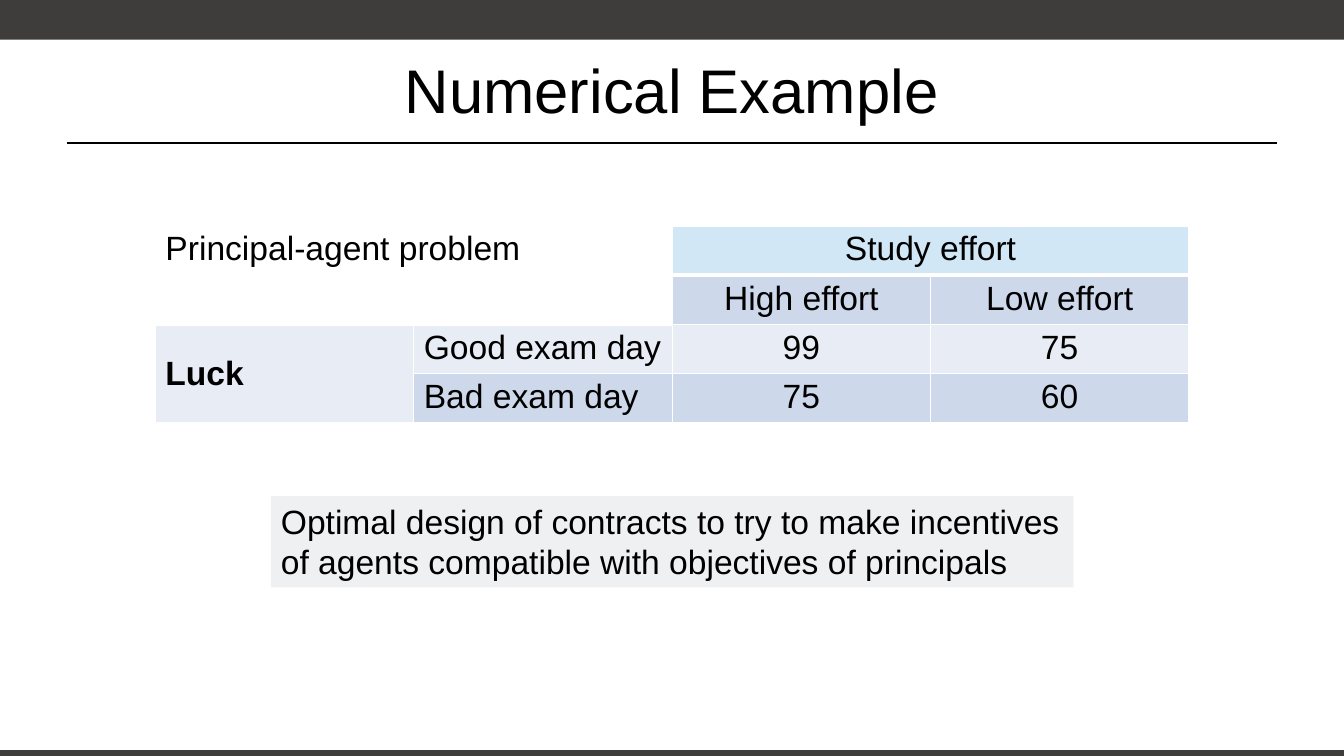
from lxml import etree
from pptx import Presentation
from pptx import util as u
from pptx.dml.color import RGBColor
from pptx.enum import shapes, text
from pptx.oxml import ns

BLACK = RGBColor(0x00, 0x00, 0x00)
WHITE = RGBColor(0xFF, 0xFF, 0xFF)
CHARCOAL = RGBColor(0x3E, 0x3D, 0x3C)
MIST = RGBColor(0xEF, 0xF0, 0xF1)
SKY = RGBColor(0xD1, 0xE7, 0xF6)
LIGHT_BAND = RGBColor(0xE8, 0xED, 0xF5)
DARK_BAND = RGBColor(0xCD, 0xD9, 0xEA)

LEFT, CENTER = text.PP_ALIGN.LEFT, text.PP_ALIGN.CENTER
WIDTH, HEIGHT = 33.87, 19.05

PAYOFFS = [
    ["Principal-agent problem", "", "Study effort", ""],
    ["", "", "High effort", "Low effort"],
    ["Luck", "Good exam day", "99", "75"],
    ["", "Bad exam day", "75", "60"],
]
FILLS = [
    [None, None, SKY, SKY],
    [None, None, DARK_BAND, DARK_BAND],
    [LIGHT_BAND] * 4,
    [LIGHT_BAND] + [DARK_BAND] * 3,
]
MERGES = [((0, 0), (1, 1)), ((0, 2), (0, 3)), ((2, 0), (3, 0))]


class SlideBuilder:
    font = "Arial"
    body_size = 24
    title_size = 44

    def __init__(self, page):
        self.page = page

    def label(self, frame, words, size, align=LEFT, bold=False):
        frame.text = words
        para = frame.paragraphs[0]
        para.alignment = align
        para.font.size = u.Pt(size)
        for span in para.runs:
            span.font.name = self.font
            span.font.size = u.Pt(size)
            span.font.bold = bold
            span.font.color.rgb = BLACK

    def box(self, left, top, width, height, fill):
        box = self.page.shapes.add_shape(
            shapes.MSO_SHAPE.RECTANGLE,
            u.Cm(left), u.Cm(top), u.Cm(width), u.Cm(height))
        box.shadow.inherit = False
        box.fill.solid()
        box.fill.fore_color.rgb = fill
        box.line.fill.background()
        return box

    def note(self, left, top, width, height, words, fill):
        frame = self.box(left, top, width, height, fill).text_frame
        frame.word_wrap = True
        frame.vertical_anchor = text.MSO_ANCHOR.TOP
        self.label(frame, words, self.body_size)

    def title(self, left, top, width, height, words):
        box = self.page.shapes.add_textbox(
            u.Cm(left), u.Cm(top), u.Cm(width), u.Cm(height))
        box.text_frame.word_wrap = True
        box.text_frame.vertical_anchor = text.MSO_ANCHOR.MIDDLE
        self.label(box.text_frame, words, self.title_size, CENTER)

    def rule(self, left, top, right):
        line = self.page.shapes.add_connector(
            shapes.MSO_CONNECTOR.STRAIGHT,
            u.Cm(left), u.Cm(top), u.Cm(right), u.Cm(top))
        line.line.color.rgb = BLACK
        line.line.width = u.Pt(1.25)
        etree.SubElement(line._element.spPr, ns.qn("a:effectLst"))

    def borders(self, cell, bottom):
        properties = cell._tc.get_or_add_tcPr()
        for side, points in (("L", 1), ("R", 1), ("T", 1), ("B", bottom)):
            edge = etree.SubElement(
                properties, ns.qn(f"a:ln{side}"), w=str(u.Pt(points)))
            paint = etree.SubElement(edge, ns.qn("a:solidFill"))
            etree.SubElement(paint, ns.qn("a:srgbClr"), val=str(WHITE))

    def table(self, left, top, column, row, values, fills, merges):
        rows, columns = len(values), len(values[0])
        table = self.page.shapes.add_table(
            rows, columns, u.Cm(left), u.Cm(top),
            u.Cm(column * columns), u.Cm(row * rows)).table
        table.first_row = table.horz_banding = False
        for start, end in merges:
            table.cell(*start).merge(table.cell(*end))
        for i in range(rows):
            for j in range(columns):
                cell = table.cell(i, j)
                cell.margin_left = cell.margin_right = u.Cm(0.25)
                cell.margin_top = cell.margin_bottom = u.Cm(0.11)
                words = values[i][j]
                self.borders(cell, 3 if i == 0 else 1)
                if fills[i][j] is None:
                    cell.fill.background()
                else:
                    cell.fill.solid()
                    cell.fill.fore_color.rgb = fills[i][j]
                if words == "Luck":
                    cell.vertical_anchor = text.MSO_ANCHOR.MIDDLE
                self.label(cell.text_frame, words, self.body_size,
                           CENTER if j > 1 else LEFT, words == "Luck")


def main():
    deck = Presentation()
    deck.slide_width, deck.slide_height = u.Cm(WIDTH), u.Cm(HEIGHT)
    slide = SlideBuilder(deck.slides.add_slide(deck.slide_layouts[6]))
    slide.box(0, 0, WIDTH, 1, CHARCOAL)
    slide.box(0, 18.9, WIDTH, 0.15, CHARCOAL)
    slide.rule(1.7, 3.6, 32.17)
    slide.title(1.7, 0.64, 30.47, 3.18, "Numerical Example")
    slide.note(6.83, 12.5, 20.22, 2.3,
               "Optimal design of contracts to try to make incentives "
               "of agents compatible with objectives of principals", MIST)
    slide.table(3.92, 5.7, 6.51, 1.19, PAYOFFS, FILLS, MERGES)
    deck.save("out.pptx")


if __name__ == "__main__":
    main()
